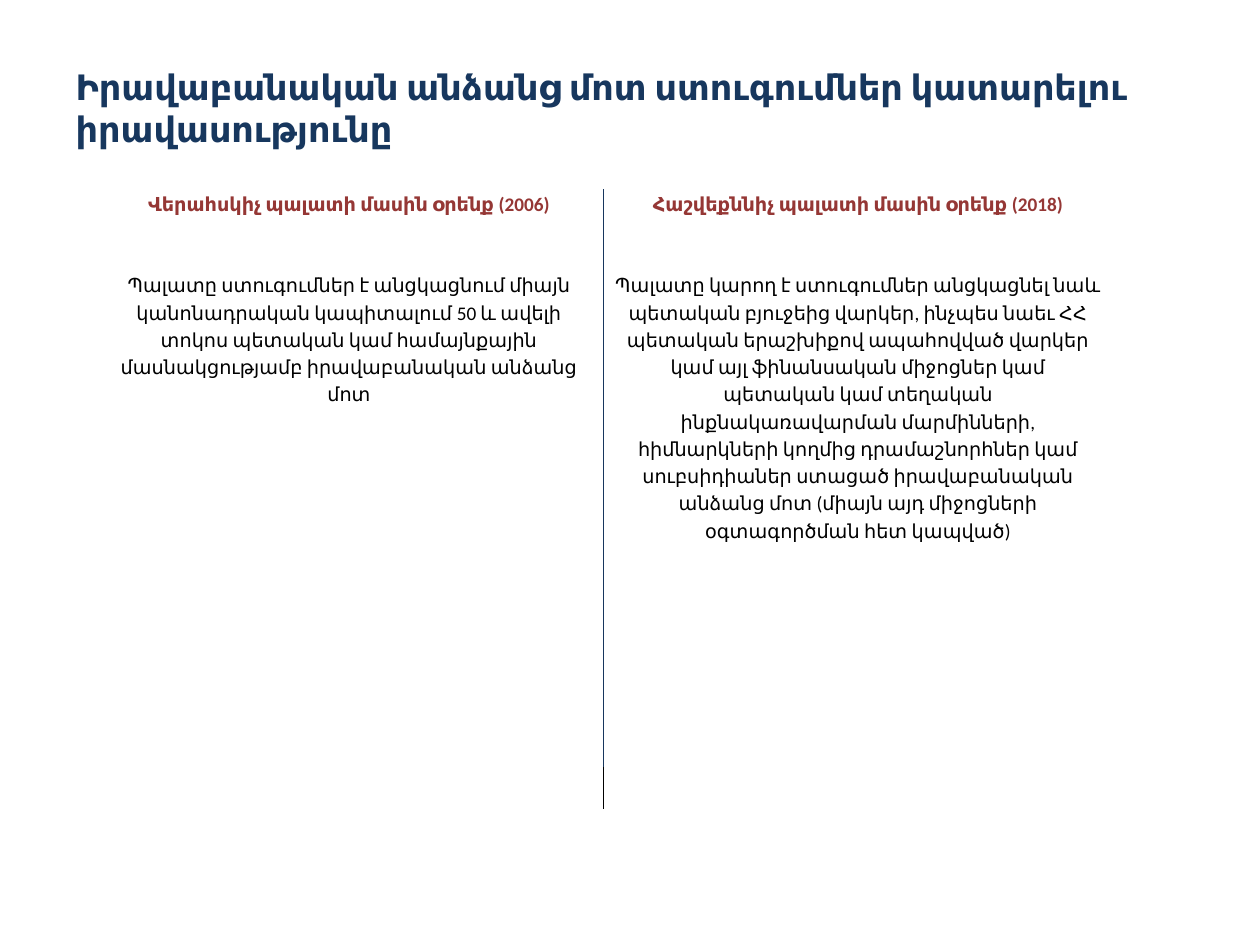
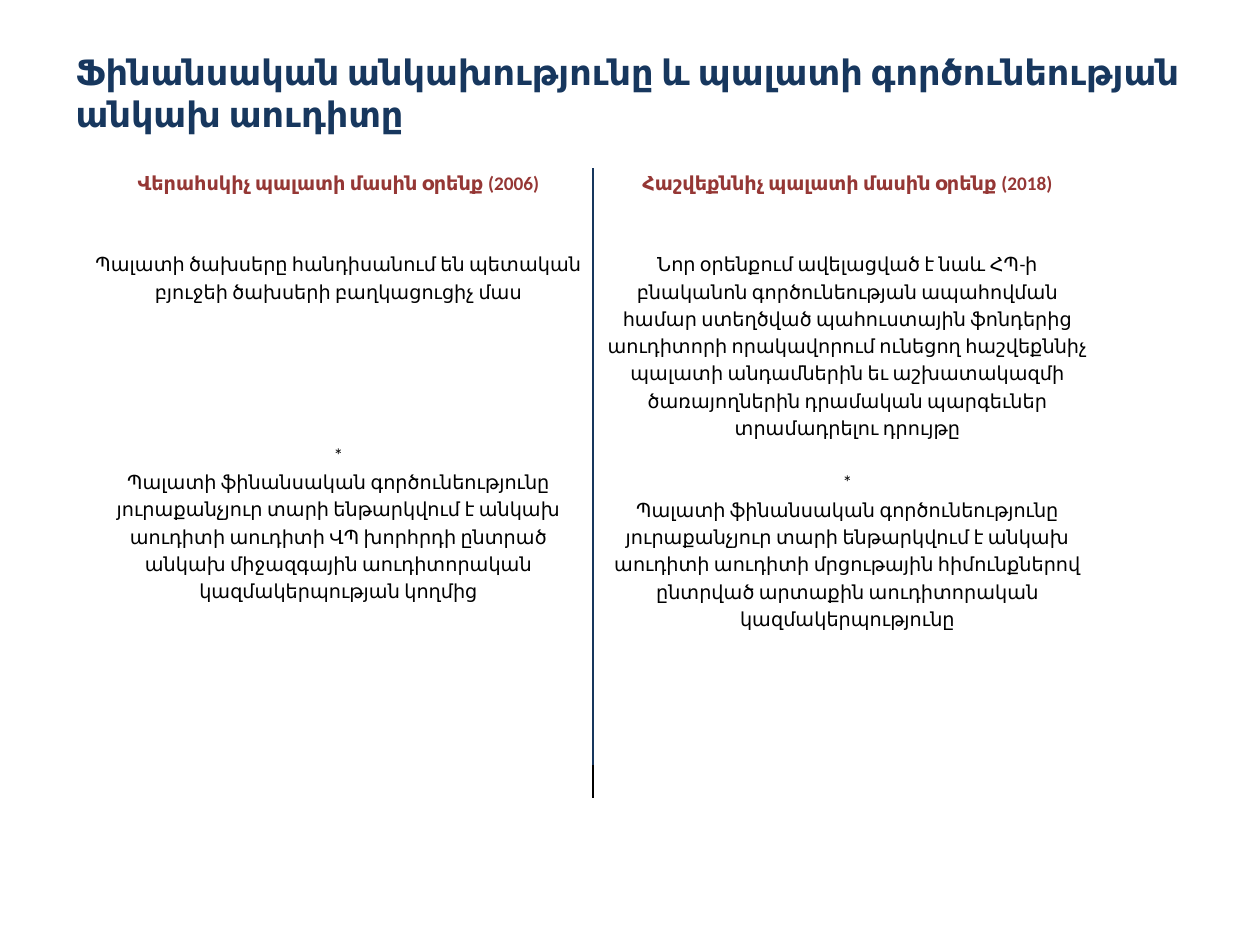
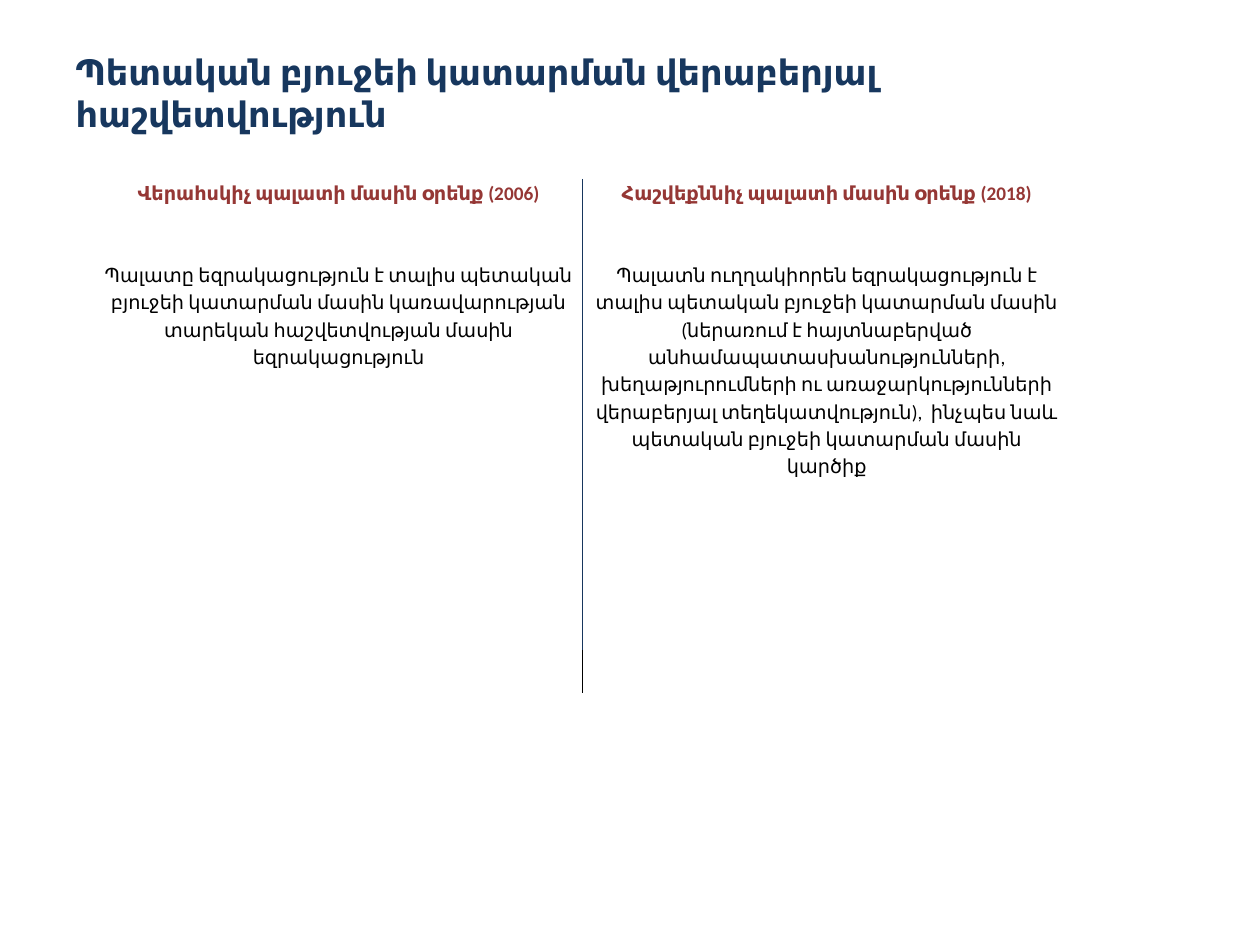
from dataclasses import dataclass
from lxml.etree import SubElement
from pptx import Presentation
from pptx.dml.color import RGBColor
from pptx.enum.text import MSO_ANCHOR, MSO_AUTO_SIZE, PP_ALIGN
from pptx.oxml.ns import qn
from pptx.util import Inches, Pt


@dataclass(frozen=True)
class Theme:
    font: str = "Calibri"
    title: str = "17375E"
    heading: str = "953735"
    body: str = "000000"
    rule: str = "17365D"
    rule_end: str = "000000"
    title_size: int = 20
    body_size: int = 11
    line_spacing: float = 1.15
    line_pt: float = 15.55
    rule_pt: int = 1
    no_grid_style: str = "{2D5ABB26-0587-4C30-8999-92F81FD0307C}"


T = Theme()
HEADINGS = ("Վերահսկիչ պալատի մասին օրենք (2006)",
            "Հաշվեքննիչ պալատի մասին օրենք (2018)")

SLIDES = [
    {
        "title": "Իրավաբանական անձանց մոտ ստուգումներ կատարելու իրավասությունը",
        "title_box": (0.5, 0.34, 9, 1.03),
        "table_at": (0.75, 1.5),
        "width": 8.08,
        "rows": (4.59, 0.33),
        "columns": (
            [(2, "Պալատը ստուգումներ է անցկացնում միայն կանոնադրական կապիտալում 50 և ավելի տոկոս պետական կամ համայնքային մասնակցությամբ իրավաբանական անձանց մոտ")],
            [(2, "Պալատը կարող է ստուգումներ անցկացնել նաև պետական բյուջեից վարկեր, ինչպես նաեւ ՀՀ պետական երաշխիքով ապահովված վարկեր կամ այլ ֆինանսական միջոցներ կամ պետական կամ տեղական ինքնակառավարման մարմինների, հիմնարկների կողմից դրամաշնորհներ կամ սուբսիդիաներ ստացած իրավաբանական անձանց մոտ (միայն այդ միջոցների օգտագործման հետ կապված)")],
        ),
    },
    {
        "title": "Ֆինանսական անկախությունը և պալատի գործունեության անկախ աուդիտը",
        "title_box": (0.5, 0.3, 9, 0.87),
        "table_at": (2 / 3, 4 / 3),
        "width": 8.08,
        "rows": (4.74, 0.26),
        "columns": (
            [(2, "Պալատի ծախսերը հանդիսանում են պետական բյուջեի ծախսերի բաղկացուցիչ մաս"),
             (5, "*"),
             (0, "Պալատի ֆինանսական գործունեությունը յուրաքանչյուր տարի ենթարկվում է անկախ աուդիտի աուդիտի ՎՊ խորհրդի ընտրած անկախ միջազգային աուդիտորական կազմակերպության կողմից")],
            [(2, "Նոր օրենքում ավելացված է նաև ՀՊ-ի բնականոն գործունեության ապահովման համար ստեղծված պահուստային ֆոնդերից աուդիտորի որակավորում ունեցող հաշվեքննիչ պալատի անդամներին եւ աշխատակազմի ծառայողներին դրամական պարգեւներ տրամադրելու դրույթը"),
             (1, "*"),
             (0, "Պալատի ֆինանսական գործունեությունը յուրաքանչյուր տարի ենթարկվում է անկախ աուդիտի աուդիտի մրցութային հիմունքներով ընտրված արտաքին աուդիտորական կազմակերպությունը")],
        ),
    },
    {
        "title": "Պետական բյուջեի կատարման վերաբերյալ հաշվետվություն",
        "title_box": (0.5, 0.3, 9, 0.87),
        "table_at": (0.75, 1.42),
        "width": 7.75,
        "rows": (3.74, 0.34),
        "columns": (
            [(2, "Պալատը եզրակացություն է տալիս պետական բյուջեի կատարման մասին կառավարության տարեկան հաշվետվության մասին եզրակացություն")],
            [(2, "Պալատն ուղղակիորեն եզրակացություն է տալիս պետական բյուջեի կատարման մասին (ներառում է հայտնաբերված անհամապատասխանությունների, խեղաթյուրումների ու առաջարկությունների վերաբերյալ տեղեկատվություն),  ինչպես նաև պետական բյուջեի կատարման մասին կարծիք")],
        ),
    },
]


def write(p, text, size=T.body_size, color=T.body, bold=False,
          align=PP_ALIGN.CENTER, spacing=T.line_spacing, before=0):
    p.alignment, p.line_spacing, p.space_before = align, spacing, Pt(before)
    r = p.add_run()
    r.text = text
    r.font.name, r.font.size, r.font.bold = T.font, Pt(size), bold
    r.font.color.rgb = RGBColor.from_string(color)


def set_border(cell, side, color):
    ln = SubElement(cell._tc.get_or_add_tcPr(), qn(f"a:{side}"), w=str(Pt(T.rule_pt)))
    SubElement(SubElement(ln, qn("a:solidFill")), qn("a:srgbClr"), val=color)


def add_title(s, text, box):
    sp = s.shapes.title
    sp.left, sp.top, sp.width, sp.height = map(Inches, box)
    tf = sp.text_frame
    tf.word_wrap, tf.auto_size = True, MSO_AUTO_SIZE.NONE
    tf.vertical_anchor = MSO_ANCHOR.MIDDLE
    write(tf.paragraphs[0], text, size=T.title_size, color=T.title, bold=True,
          align=PP_ALIGN.LEFT, spacing=1.0)


def add_comparison(s, at, width, rows, columns):
    box = map(Inches, (*at, width, sum(rows)))
    table = s.shapes.add_table(len(rows), len(columns), *box).table
    table.first_row = table.horz_banding = False
    table._tbl.tblPr.find(qn("a:tableStyleId")).text = T.no_grid_style
    for row, height in zip(table.rows, rows):
        row.height = Inches(height)
    for cell in table.iter_cells():
        cell.margin_left = cell.margin_right = Inches(0.08)
        cell.margin_top = cell.margin_bottom = 0
    for r, color in enumerate((T.rule, T.rule_end)):
        for c, side in enumerate(("lnR", "lnL")):
            set_border(table.cell(r, c), side, color)
    for cell in table.iter_cells():
        cell.fill.background()
    for c, (heading, paragraphs) in enumerate(zip(HEADINGS, columns)):
        tf = table.cell(0, c).text_frame
        write(tf.paragraphs[0], heading, color=T.heading, bold=True)
        for blank_lines, text in paragraphs:
            write(tf.add_paragraph(), text, before=blank_lines * T.line_pt)
        end = table.cell(1, c).text_frame.paragraphs[0]._p.get_or_add_endParaRPr()
        end.set("sz", str(T.body_size * 100))


def main():
    prs = Presentation()
    prs.slide_width, prs.slide_height = Inches(10), Inches(7.5)
    for d in SLIDES:
        s = prs.slides.add_slide(prs.slide_layouts[5])
        add_title(s, d["title"], d["title_box"])
        add_comparison(s, d["table_at"], d["width"], d["rows"], d["columns"])
    prs.save("out.pptx")


if __name__ == "__main__":
    main()
